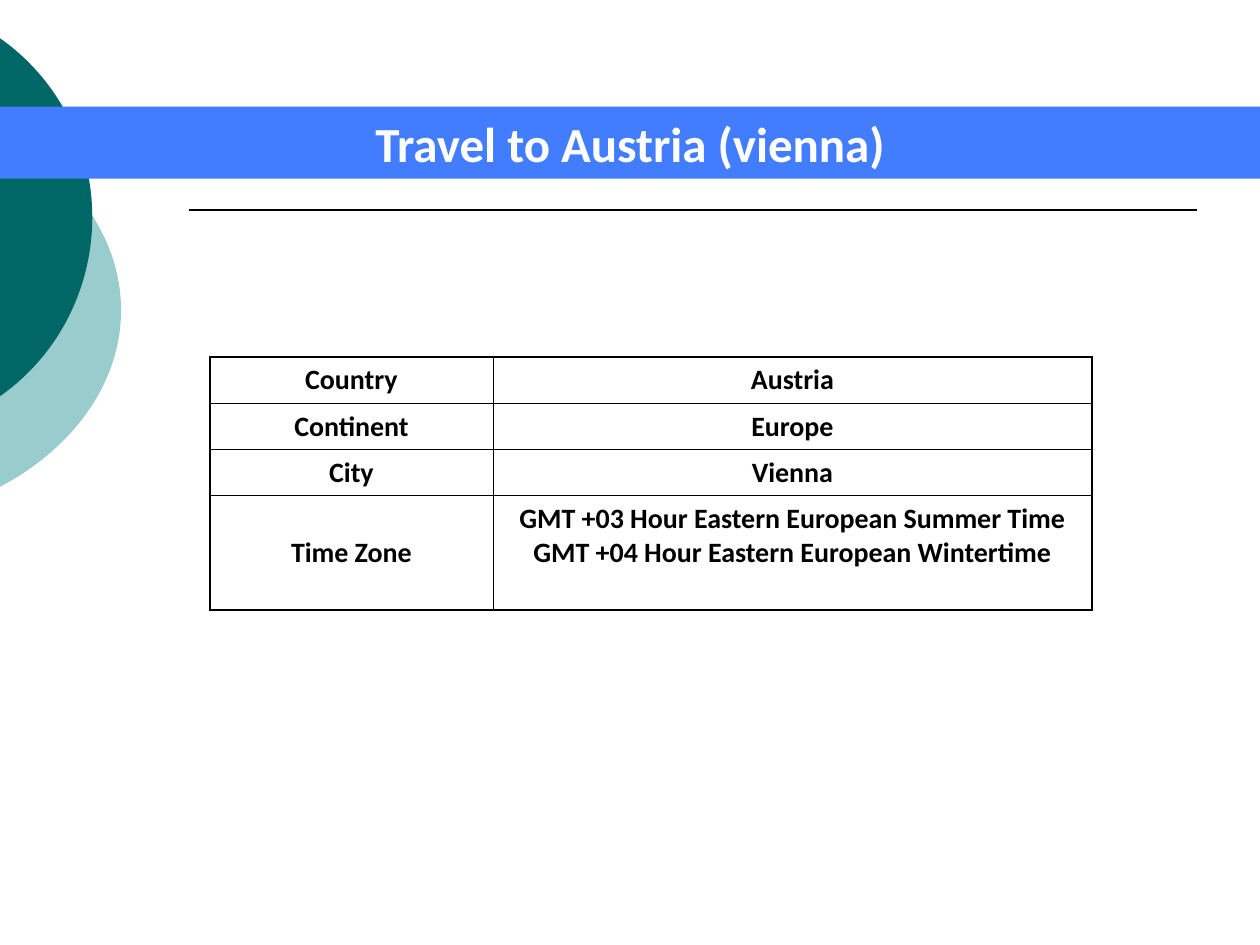
"""Build the Vienna travel slide with its facts table."""
from lxml import etree
from pptx import Presentation, util as u
from pptx.dml.color import RGBColor
from pptx.enum import shapes, text
from pptx.oxml.ns import qn

TITLE = "Travel to Austria (vienna)"
FACTS = [
    ("Country", "Austria"),
    ("Continent", "Europe"),
    ("City", "Vienna"),
    ("Time Zone", "GMT +03 Hour Eastern European Summer Time\n"
                  "GMT +04 Hour Eastern European Wintertime"),
]
ELLIPSES = [
    ((-8.99, 1.91, 11.43, 8.69), "99CCCC"),
    ((-6.73, 0, 8.59, 8.76), "006666"),
]
COLUMN_WIDTHS = (5.71, 12.07)
ROW_HEIGHTS = (0.92, 0.92, 0.92, 2.28)
OUTER_LINE, INNER_LINE = 1, 0.5


def color(hex_string):
    return RGBColor.from_string(hex_string)


def fill_solid(shape, hex_string):
    shape.fill.solid()
    shape.fill.fore_color.rgb = color(hex_string)


def format_text(frame, size, hex_string):
    for para in frame.paragraphs:
        para.alignment = text.PP_ALIGN.CENTER
        para.font.name = "Calibri"
        para.font.size = u.Pt(size)
        para.font.bold = True
        para.font.color.rgb = color(hex_string)


def add_ellipse(page, place, hex_string):
    ellipse = page.shapes.add_shape(shapes.MSO_SHAPE.OVAL, *map(u.Cm, place))
    ellipse.shadow.inherit = False
    fill_solid(ellipse, hex_string)
    ellipse.line.fill.background()


def add_rule(page):
    rule = page.shapes.add_connector(
        shapes.MSO_CONNECTOR.STRAIGHT, u.Cm(3.81), u.Cm(4.23), u.Cm(24.13), u.Cm(4.23))
    rule.line.color.rgb = color("000000")
    rule.line.width = u.Pt(1)
    etree.SubElement(rule._element.spPr, qn("a:effectLst"))


def format_title(page):
    title = page.shapes.title
    title.left, title.top, title.width, title.height = map(u.Cm, (0, 2.15, 25.4, 1.45))
    fill_solid(title, "437DFF")
    title.text_frame.text = TITLE
    title.text_frame.auto_size = text.MSO_AUTO_SIZE.NONE
    title.text_frame.vertical_anchor = text.MSO_ANCHOR.MIDDLE
    format_text(title.text_frame, 28, "FFFFFF")
    page.shapes._spTree.append(title._element)


def add_border(cell, side, points):
    line = etree.SubElement(cell._tc.get_or_add_tcPr(), qn(f"a:ln{side}"),
                            w=str(u.Pt(points)))
    fill = etree.SubElement(line, qn("a:solidFill"))
    etree.SubElement(fill, qn("a:srgbClr"), val="000000")


def add_facts(page):
    rows, columns = len(FACTS), len(COLUMN_WIDTHS)
    table = page.shapes.add_table(
        rows, columns, u.Cm(4.23), u.Cm(7.2),
        u.Cm(sum(COLUMN_WIDTHS)), u.Cm(sum(ROW_HEIGHTS))).table
    table.first_row = table.horz_banding = False
    for column, width in zip(table.columns, COLUMN_WIDTHS):
        column.width = u.Cm(width)
    for row, height in zip(table.rows, ROW_HEIGHTS):
        row.height = u.Cm(height)
    for row, fact in enumerate(FACTS):
        for column, words in enumerate(fact):
            cell = table.cell(row, column)
            cell.text = words
            format_text(cell.text_frame, 16, "000000")
            cell.vertical_anchor = text.MSO_ANCHOR.MIDDLE
            cell.margin_top = cell.margin_bottom = u.Cm(0.12)
            outer_sides = {"L": column == 0, "R": column == columns - 1,
                           "T": row == 0, "B": row == rows - 1}
            for side, is_outer in outer_sides.items():
                add_border(cell, side, OUTER_LINE if is_outer else INNER_LINE)
            cell.fill.background()
    table.cell(rows - 1, columns - 1).margin_bottom = u.Cm(0.8)


def main():
    deck = Presentation()
    deck.slide_width, deck.slide_height = u.Cm(25.4), u.Cm(19.05)
    page = deck.slides.add_slide(deck.slide_layouts.get_by_name("Title Only"))
    for place, hex_string in ELLIPSES:
        add_ellipse(page, place, hex_string)
    add_rule(page)
    format_title(page)
    add_facts(page)
    deck.save("out.pptx")


if __name__ == "__main__":
    main()
